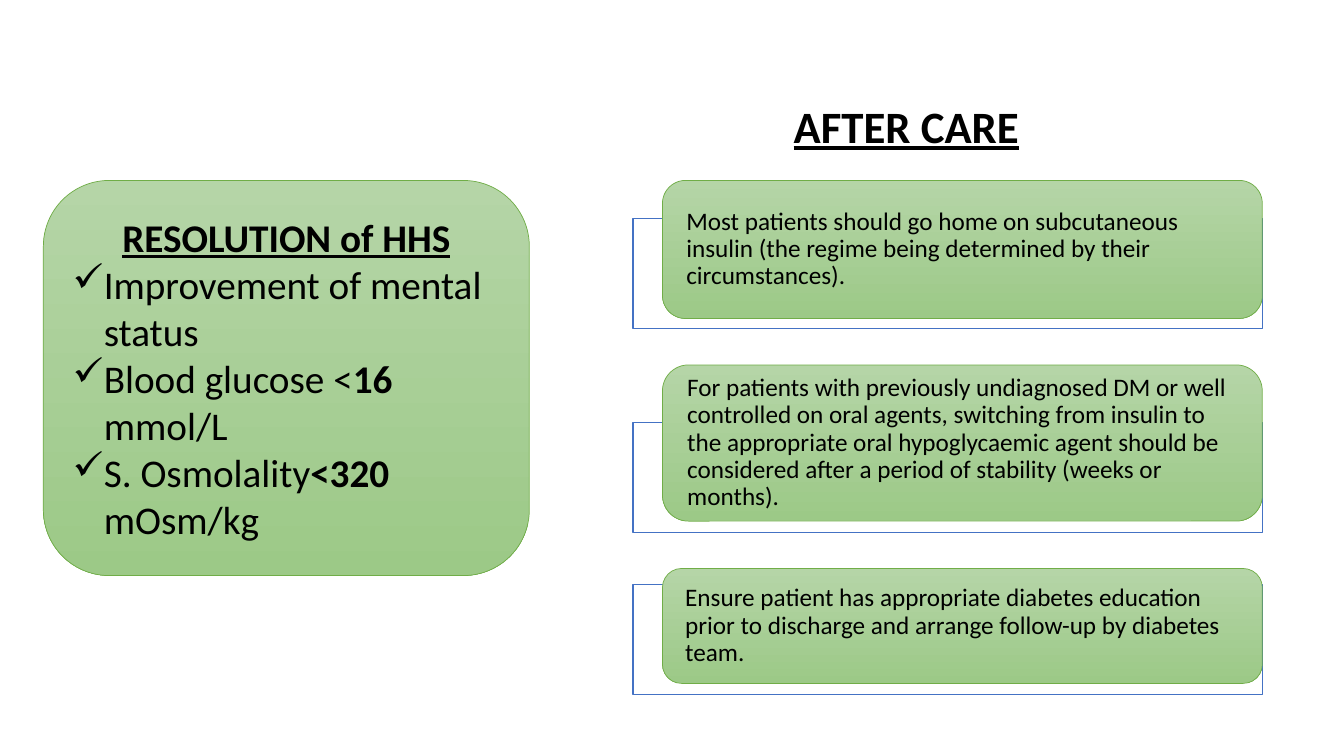
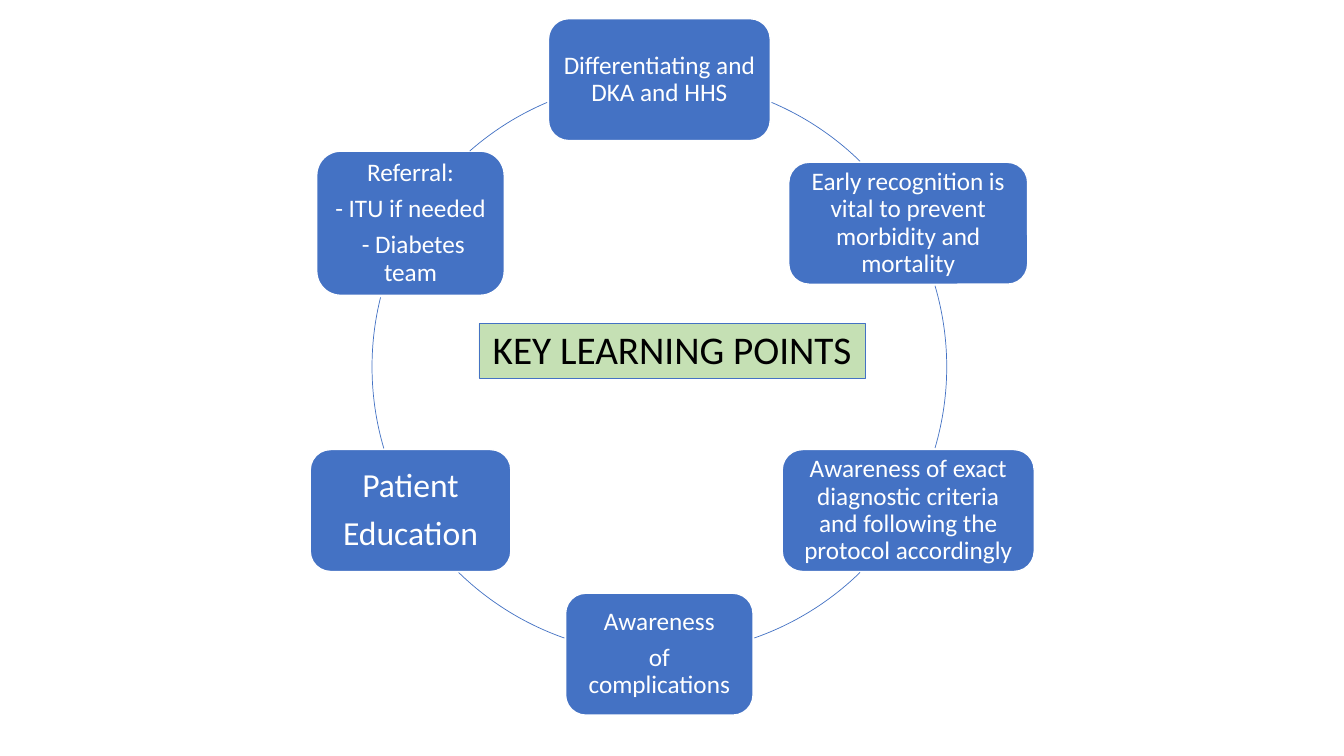
from math import cos, radians, sin

from lxml.etree import SubElement
from pptx import Presentation
from pptx.dml.color import RGBColor
from pptx.enum.shapes import MSO_SHAPE as Preset
from pptx.enum.text import MSO_ANCHOR as Anchor, MSO_AUTO_SIZE as AutoSize, PP_ALIGN as Align
from pptx.oxml.ns import qn
from pptx.util import Inches, Pt


class Theme:
    font = "Calibri"
    black, white = "000000", "FFFFFF"
    blue, green = "4472C4", "70AD47"
    pale_green = "C5E0B4"
    gradient = ("B5D5A7", "9CC987")
    body, large, heading, title = 18, 24, 28, 32
    thin, normal = 0.5, 1
    tight = 0.9


RESOLUTION_HEADING = "RESOLUTION of HHS"
RESOLUTION_CRITERIA = [
    [("Improvement of mental status", False)],
    [("Blood glucose <", False), ("16 ", True), ("mmol/L", False)],
    [("S. Osmolality", False), ("<320 ", True), ("mOsm/kg", False)],
]

# text, top and height of the card, top of the frame behind it
AFTER_CARE = [
    ("Most patients should go home on subcutaneous insulin (the regime being "
     "determined by their circumstances).", 1.79, 1.37, 2.17),
    ("For patients with previously undiagnosed DM or well controlled on oral "
     "agents, switching from insulin to the appropriate oral hypoglycaemic agent "
     "should be considered after a period of stability (weeks or months).",
     3.62, 1.55, 4.19),
    ("Ensure patient has appropriate diabetes education prior to discharge and "
     "arrange follow-up by diabetes team.", 5.64, 1.14, 5.8),
]

# paragraphs, width, height, text size, inset, angles of the arc to the next point
LEARNING_POINTS = [
    (["Differentiating and DKA and HHS"], 2.2, 1.21, Theme.body, 0.07, (293, 314.3)),
    (["Early recognition is vital to prevent morbidity and mortality"],
     2.37, 1.21, Theme.body, 0.07, (343.6, 16.4)),
    (["Awareness of exact diagnostic criteria and following the protocol accordingly"],
     2.5, 1.21, Theme.body, 0.07, (45.7, 70.7)),
    (["Awareness", "of complications"], 1.86, 1.21, Theme.body, 0.07, (109.3, 134.3)),
    (["Patient", "Education"], 1.99, 1.21, Theme.large, 0.1, (163.5, 194)),
    (["Referral:", "- ITU if needed", " - Diabetes team"],
     1.86, 1.43, Theme.body, 0.07, (228.7, 247)),
]
RING_X, RING_Y, RING_RADIUS = 6.54, 3.64, 2.85


def color(value):
    return RGBColor.from_string(value)


def paint(shape, fill, line, width):
    """Fill with one colour, a vertical gradient (a pair) or nothing (None)."""
    if fill is None:
        shape.fill.background()
    elif isinstance(fill, tuple):
        shape.fill.gradient()
        shape.fill.gradient_angle = 270
        for stop, value in zip(shape.fill.gradient_stops, fill):
            stop.color.rgb = color(value)
    else:
        shape.fill.solid()
        shape.fill.fore_color.rgb = color(fill)
    shape.line.color.rgb = color(line)
    shape.line.width = Pt(width)


def add_shape(slide, preset, left, top, width, height, fill, line, line_width=Theme.normal):
    shape = slide.shapes.add_shape(
        preset, Inches(left), Inches(top), Inches(width), Inches(height))
    shape.shadow.inherit = False
    paint(shape, fill, line, line_width)
    return shape


def set_frame(shape, anchor=Anchor.MIDDLE, inset_x=0.1, inset_y=0.05):
    frame = shape.text_frame
    frame.word_wrap = True
    frame.auto_size = AutoSize.NONE
    frame.vertical_anchor = anchor
    frame.margin_left = frame.margin_right = Inches(inset_x)
    frame.margin_top = frame.margin_bottom = Inches(inset_y)


def add_text(shape, text, size=Theme.body, ink=Theme.black, align=Align.LEFT,
             bold=False, underline=False, spacing=1.0, after=0, bullet=None):
    """Add a paragraph; text is a string or a list of (text, bold) runs."""
    frame = shape.text_frame
    paragraph = frame.add_paragraph() if frame.text else frame.paragraphs[0]
    paragraph.alignment = align
    paragraph.line_spacing = spacing
    paragraph.space_before = Pt(0)
    paragraph.space_after = Pt(after)
    if bullet:
        properties = paragraph._p.get_or_add_pPr()
        properties.set("marL", str(Inches(0.31)))
        properties.set("indent", str(-Inches(0.31)))
        SubElement(properties, qn("a:buChar")).set("char", bullet)
    for words, strong in [(text, bold)] if isinstance(text, str) else text:
        run = paragraph.add_run()
        run.text = words
        run.font.name = Theme.font
        run.font.size = Pt(size)
        run.font.bold = strong
        run.font.underline = underline
        run.font.color.rgb = color(ink)


def add_titled_slide(presentation, text, left, top, width, height, anchor, **text_format):
    slide = presentation.slides.add_slide(presentation.slide_layouts[5])
    title = slide.shapes.title
    title.left, title.top = Inches(left), Inches(top)
    title.width, title.height = Inches(width), Inches(height)
    set_frame(title, anchor)
    add_text(title, text, align=Align.CENTER, **text_format)
    return slide


def build_after_care(presentation):
    slide = add_titled_slide(presentation, "AFTER CARE", 5.87, 0.93, 6.24, 0.64, Anchor.TOP,
                             size=Theme.title, bold=True, underline=True)
    for text, top, height, frame_top in AFTER_CARE:
        add_shape(slide, Preset.RECTANGLE, 6.28, frame_top, 6.24, 1.09,
                  Theme.white, Theme.blue)
        card = add_shape(slide, Preset.ROUNDED_RECTANGLE, 6.57, top, 5.95, height,
                         Theme.gradient, Theme.green, Theme.thin)
        set_frame(card, inset_x=0.17, inset_y=0)
        add_text(card, text, spacing=Theme.tight, after=0.35 * Theme.body)

    panel = add_shape(slide, Preset.ROUNDED_RECTANGLE, 0.43, 1.79, 4.82, 3.92,
                      Theme.gradient, Theme.green, Theme.thin)
    set_frame(panel)
    add_text(panel, RESOLUTION_HEADING, size=Theme.heading, align=Align.CENTER,
             bold=True, underline=True)
    for criterion in RESOLUTION_CRITERIA:
        add_text(panel, criterion, size=Theme.heading, bullet="✓")


def build_learning_points(presentation):
    slide = add_titled_slide(presentation, "KEY LEARNING POINTS", 4.75, 3.21, 3.83, 0.54,
                             Anchor.BOTTOM, size=Theme.heading, spacing=Theme.tight)
    paint(slide.shapes.title, Theme.pale_green, Theme.blue, Theme.thin)
    step = 360 / len(LEARNING_POINTS)
    for index, (lines, width, height, size, inset, arc_angles) in enumerate(LEARNING_POINTS):
        angle = radians(index * step - 90)
        left = RING_X + RING_RADIUS * cos(angle) - width / 2
        top = RING_Y + RING_RADIUS * sin(angle) - height / 2
        point = add_shape(slide, Preset.ROUNDED_RECTANGLE, left, top, width, height,
                          Theme.blue, Theme.white)
        set_frame(point, inset_x=inset, inset_y=inset)
        for line in lines:
            add_text(point, line, size=size, ink=Theme.white, align=Align.CENTER,
                     spacing=Theme.tight, after=0.35 * size)
        arc = add_shape(slide, Preset.ARC, RING_X - RING_RADIUS, RING_Y - RING_RADIUS,
                        2 * RING_RADIUS, 2 * RING_RADIUS, None, Theme.blue, Theme.thin)
        for position, degrees in enumerate(arc_angles):
            # Angles are stored in 60000ths of a degree, adjustments in 100000ths
            arc.adjustments[position] = degrees * 0.6


def main():
    presentation = Presentation()
    presentation.slide_width, presentation.slide_height = Inches(13.33), Inches(7.5)
    build_after_care(presentation)
    build_learning_points(presentation)
    presentation.save("out.pptx")


if __name__ == "__main__":
    main()
